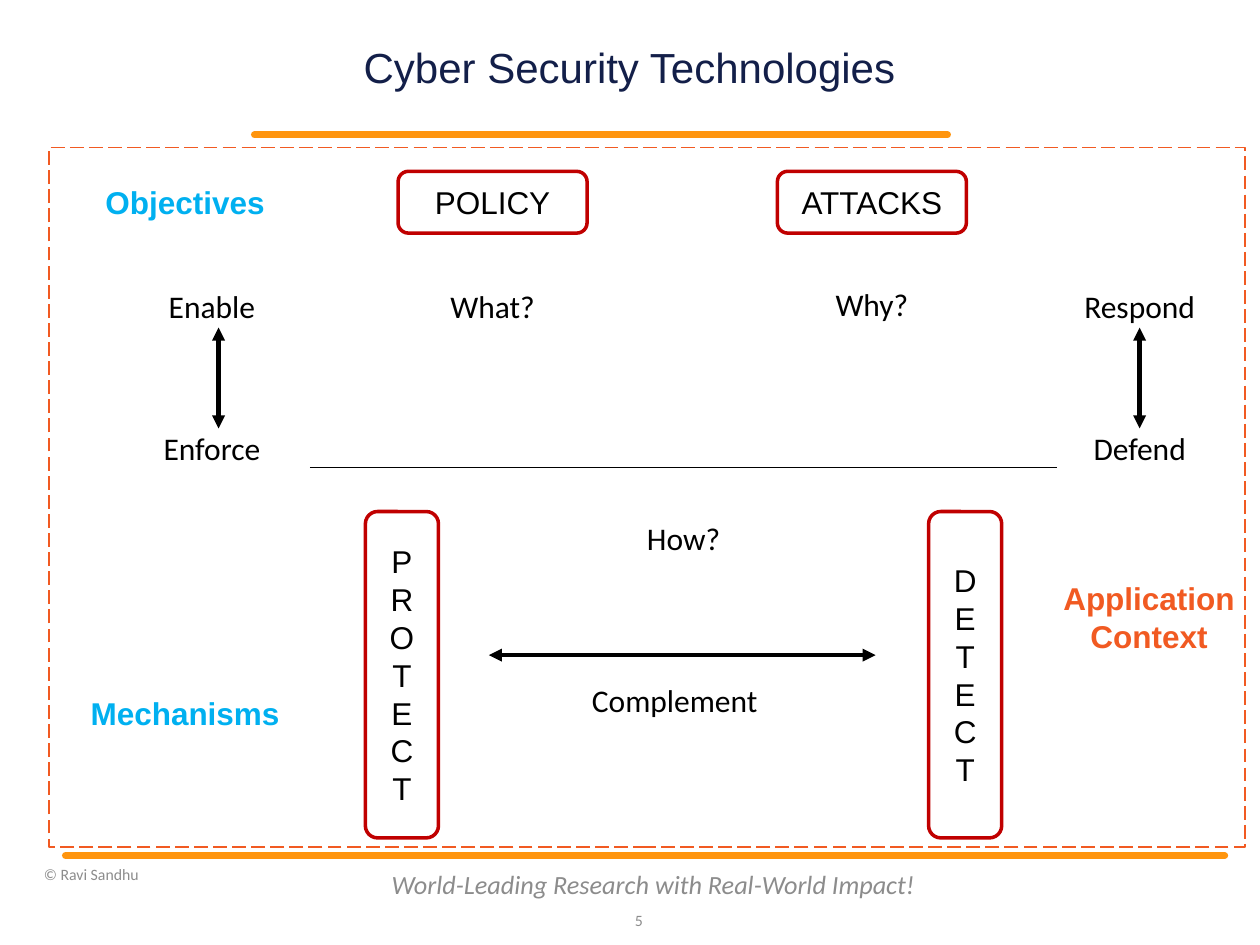
from lxml.etree import SubElement
from pptx import Presentation
from pptx.dml.color import RGBColor
from pptx.enum.dml import MSO_LINE_DASH_STYLE as Dash
from pptx.enum.shapes import MSO_CONNECTOR as Connector, MSO_SHAPE as Shape
from pptx.enum.text import MSO_ANCHOR as Anchor, MSO_AUTO_SIZE as AutoSize, PP_ALIGN as Align
from pptx.oxml.ns import qn
from pptx.util import Inches, Pt

COLUMNS, ROWS = 40, 30
CELL = 0.25
COLORS = {
    "title": "131F49", "rule": "FF950E", "muted": "8C8C8C", "ink": "000000",
    "border": "C00000", "layer": "00B0F0", "context": "F15A22", "paper": "FFFFFF",
}


def cells(*lengths):
    """Turn grid cells into slide lengths."""
    return [Inches(length * CELL) for length in lengths]


def color(name):
    """Look up a named colour."""
    return RGBColor.from_string(COLORS[name])


def write_text(shape, text, size=18, font="Calibri", ink="ink", bold=False, italic=False,
               align=Align.CENTER, anchor=Anchor.MIDDLE, wrap=False, spacing=None):
    """Fill a shape with formatted text, one paragraph per line."""
    frame = shape.text_frame
    frame.text = text
    frame.word_wrap = wrap
    frame.vertical_anchor = anchor
    for paragraph in frame.paragraphs:
        paragraph.alignment = align
        paragraph.line_spacing = spacing
        for run in paragraph.runs:
            run.font.size, run.font.name = Pt(size), font
            run.font.bold, run.font.italic = bold, italic
            run.font.color.rgb = color(ink)


def add_box(slide, box, kind=Shape.ROUNDED_RECTANGLE, fill="paper", border=None, width=2):
    """Add a preset shape, with fill and border only where named."""
    shape = slide.shapes.add_shape(kind, *cells(*box))
    shape.shadow.inherit = False
    if fill:
        shape.fill.solid()
        shape.fill.fore_color.rgb = color(fill)
    else:
        shape.fill.background()
    if border:
        shape.line.color.rgb = color(border)
        shape.line.width = Pt(width)
    else:
        shape.line.fill.background()
    return shape


def add_text(slide, box, text, **text_format):
    """Add a text box."""
    shape = slide.shapes.add_textbox(*cells(*box))
    write_text(shape, text, **text_format)
    return shape


def add_caption(slide, center, top, width, text, align=Align.CENTER):
    """Add a one-line caption centred on a column."""
    caption = add_text(slide, (center - width / 2, top, width, 1.6), text,
                       align=align, anchor=Anchor.TOP)
    caption.text_frame.auto_size = AutoSize.SHAPE_TO_FIT_TEXT


def add_line(slide, start, end, ink="ink", width=2.5, arrows=False, round_cap=False):
    """Add a straight line, optionally with arrowheads at both ends."""
    line = slide.shapes.add_connector(Connector.STRAIGHT, *cells(*start, *end))
    line.line.color.rgb = color(ink)
    line.line.width = Pt(width)
    outline = line.element.spPr.find(qn("a:ln"))
    if round_cap:
        outline.set("cap", "rnd")
    if arrows:
        for end_tag in ("a:headEnd", "a:tailEnd"):
            SubElement(outline, qn(end_tag), type="triangle")
    SubElement(line.element.spPr, qn("a:effectLst"))


def add_header(slide, box):
    """Format the title and underline it."""
    title = slide.shapes.title
    title.left, title.top, title.width, title.height = cells(*box)
    write_text(title, "Cyber Security Technologies", size=24, font="Arial", ink="title",
               wrap=True, spacing=0.9)
    frame = title.text_frame
    frame.margin_left = frame.margin_right = frame.margin_top = frame.margin_bottom = 0
    left, top, width, height = box
    rule = top + height + 1.04
    add_line(slide, (left - 1.4, rule), (left + width - 0.4, rule), "rule", 4, round_cap=True)


def add_footer(slide, box):
    """Add the bottom rule, the motto, the page number and the copyright line."""
    left, top, width, height = box
    add_line(slide, (left, top), (left + width, top), "rule", 4, round_cap=True)
    add_text(slide, (left + 9.92, top + 0.12, 17.48, 1.6),
             "World-Leading Research with Real-World Impact!",
             size=15, ink="muted", italic=True, wrap=True)
    add_text(slide, (left + 17.12, top + height - 1.6, 1.6, 1.6), "5",
             size=9, ink="muted", align=Align.RIGHT, wrap=True)
    add_text(slide, (left - 1.08, top + 0.16, 11, 0.88), "© Ravi Sandhu",
             size=9, ink="muted", align=Align.LEFT, wrap=True)


def add_label(slide, left, top, text, ink):
    """Add a bold layer label."""
    label = add_box(slide, (left, top, 6, 1.96))
    write_text(label, text, font="Arial", ink=ink, bold=True)


def add_objective(slide, box, name, question, question_width, drop):
    """Add an objective with its question below it."""
    left, top, width, _ = box
    write_text(add_box(slide, box, border="border"), name, font="Arial")
    add_caption(slide, left + width / 2, top + drop, question_width, question)


def add_mechanisms(slide, box):
    """Add the two upright mechanisms and the arrow that links them."""
    left, top, width, height = box
    pillar = 2.32
    for column, name in ((left, "PROTECT"), (left + width - pillar, "DETECT")):
        shape = add_box(slide, (column, top, pillar, height), border="border")
        write_text(shape, name, font="Arial")
        shape.element.txBody.find(qn("a:bodyPr")).set("vert", "wordArtVert")
    middle = left + width / 2
    arrow = top + 4.56
    add_line(slide, (middle - 6.18, arrow), (middle + 6.1, arrow), arrows=True)
    add_caption(slide, middle - 0.04, arrow + 0.64, 6.52, "Complement", Align.LEFT)
    add_caption(slide, middle, top + 0.04, 3.4, "How?")


def add_scale(slide, box, upper, lower, widths, align):
    """Add a vertical double arrow between two captions."""
    left, top, width, height = box
    center = left + width / 2
    add_line(slide, (center, top + height - 1.44), (center, top + 1.48), arrows=True)
    add_caption(slide, center, top + height - 1.6, widths[1], lower, align)
    add_caption(slide, center, top, widths[0], upper, align)


def main():
    """Build and save the slide."""
    presentation = Presentation()
    presentation.slide_width, presentation.slide_height = cells(COLUMNS, ROWS)
    slide = presentation.slides.add_slide(presentation.slide_layouts[5])

    add_header(slide, (9.48, 1.2, 21, 2.04))
    add_footer(slide, (2.08, 27.16, 36.8, 2.84))
    add_mechanisms(slide, (11.6, 16.24, 20.2, 10.36))
    add_objective(slide, (12.64, 5.44, 6, 1.96), "POLICY", "What?", 3.72, 3.48)
    add_objective(slide, (24.68, 5.44, 6, 1.96), "ATTACKS", "Why?", 3.4, 3.4)
    add_line(slide, (9.84, 14.84), (33.56, 14.84), width=0.75)
    add_scale(slide, (4.8, 8.92, 4.28, 6.12), "Enable", "Enforce", (3.96, 4.28), Align.LEFT)
    add_scale(slide, (33.76, 8.92, 4.84, 6.12), "Respond", "Defend", (4.84, 4.08), Align.CENTER)
    add_label(slide, 2.88, 5.44, "Objectives", "layer")
    add_label(slide, 2.88, 21.64, "Mechanisms", "layer")
    frame = add_box(slide, (1.56, 4.68, 37.96, 22.2), Shape.RECTANGLE, None, "context", 1)
    frame.line.dash_style = Dash.LONG_DASH
    add_label(slide, 33.48, 18.6, "Application\nContext", "context")

    presentation.save("out.pptx")


if __name__ == "__main__":
    main()
